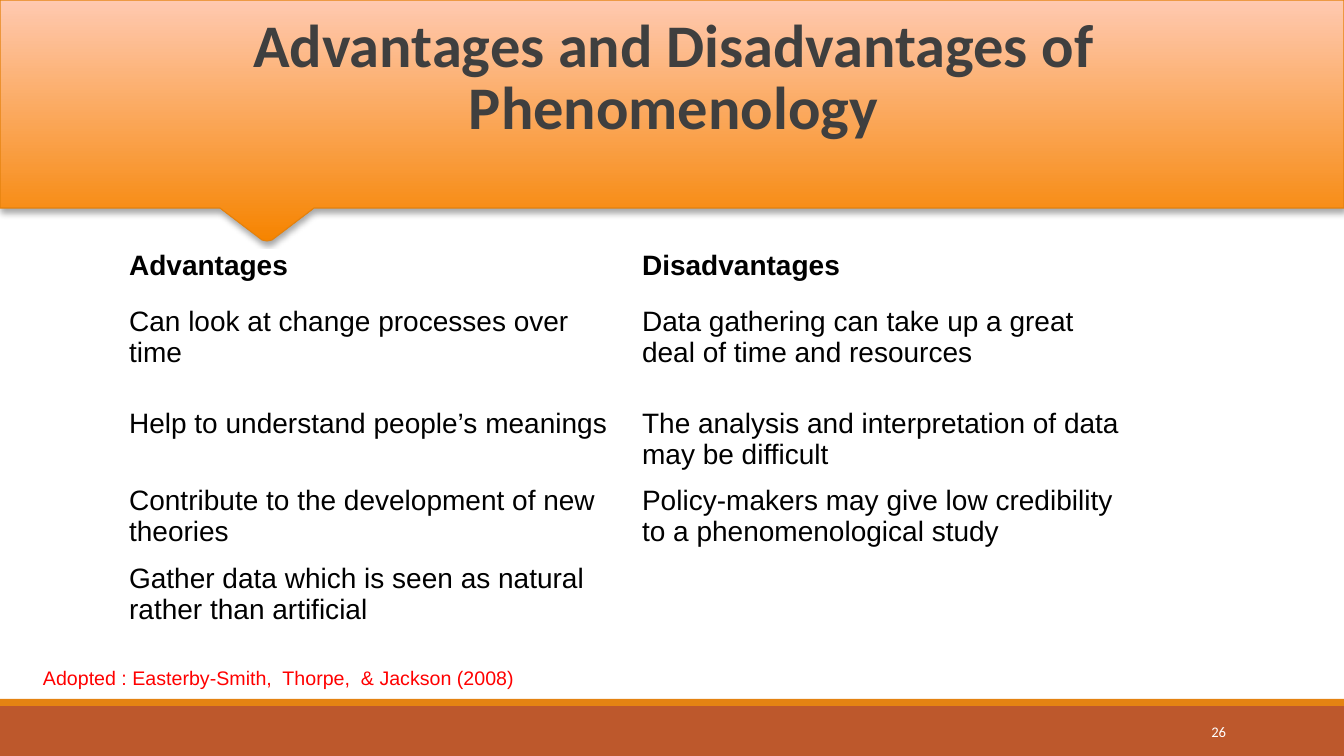
from lxml import etree
from pptx import Presentation
from pptx.dml.color import RGBColor
from pptx.enum.shapes import MSO_SHAPE
from pptx.enum.text import MSO_ANCHOR, MSO_AUTO_SIZE, PP_ALIGN
from pptx.util import Pt

RECTANGLE = MSO_SHAPE.RECTANGLE
TOP, MIDDLE, BOTTOM = MSO_ANCHOR.TOP, MSO_ANCHOR.MIDDLE, MSO_ANCHOR.BOTTOM
LEFT, CENTER, RIGHT = PP_ALIGN.LEFT, PP_ALIGN.CENTER, PP_ALIGN.RIGHT

# Content
TITLE = "Advantages and Disadvantages of Phenomenology\v"
ROWS = [
    ("Advantages", "Disadvantages"),
    ("Can look at change processes over time",
     "Data gathering can take up a great deal of time and resources"),
    ("Help to understand people’s meanings",
     "The analysis and interpretation of data may be difficult"),
    ("Contribute to the development of new theories",
     "Policy-makers may give low credibility to a phenomenological study"),
    ("Gather data which is seen as natural rather than artificial", ""),
]
CREDIT = "Adopted : Easterby-Smith,  Thorpe,  & Jackson (2008)"
PAGE_NUMBER = "26"

COLORS = {
    "footer": "BD582C", "stripe": "E48312",
    "banner_low": "F68400", "banner_high": "FFC9B0", "banner_edge": "E4810C",
    "title": "3F3F3F", "body": "000000", "credit": "FF0000", "number": "FFFFFF",
}

# Layout in px
WIDTH, HEIGHT = 1344, 756
EMU_PER_PX = 914400 / 100.8
BANNER_OUTLINE = [
    (0, 0), (0, 208), (220, 208), (262, 240), (267, 241), (272, 240),
    (314, 208), (WIDTH, 208), (WIDTH, 0),
]
BARS = [("footer", 706, 50), ("stripe", 699, 7)]
TABLE_LEFT, TABLE_TOP, COLUMN_WIDTH = 119, 245, 513
ROW_HEIGHTS = [56, 102, 73, 73, 94]

DRAWING = "http://schemas.openxmlformats.org/drawingml/2006/main"
BANNER_SHADOW = (
    f'<a:effectLst xmlns:a="{DRAWING}">'
    '<a:outerShdw blurRad="39370" dist="22860" dir="5400000" rotWithShape="0">'
    '<a:srgbClr val="000000"><a:alpha val="35000"/></a:srgbClr>'
    '</a:outerShdw></a:effectLst>'
)


def px(length):
    return round(length * EMU_PER_PX)


def color(name):
    return RGBColor.from_string(COLORS[name])


def style(para, font_name, size, color_name, bold=False):
    for span in para.runs:
        span.font.name = font_name
        span.font.size = Pt(size)
        span.font.bold = bold
        span.font.color.rgb = color(color_name)


def add_text(page, text, area, font_name, size, color_name,
             bold=False, align=LEFT, anchor=TOP):
    box = page.shapes.add_textbox(*map(px, area))
    frame = box.text_frame
    frame.word_wrap = True
    frame.vertical_anchor = anchor
    frame.text = text
    para = frame.paragraphs[0]
    para.alignment = align
    style(para, font_name, size, color_name, bold)
    return frame


deck = Presentation()
deck.slide_width, deck.slide_height = px(WIDTH), px(HEIGHT)
page = deck.slides.add_slide(deck.slide_layouts[6])

# Bottom bars
for name, top, height in BARS:
    bar = page.shapes.add_shape(RECTANGLE, 0, px(top), px(WIDTH), px(height))
    bar.shadow.inherit = False
    bar.fill.solid()
    bar.fill.fore_color.rgb = color(name)
    bar.line.fill.background()

# Banner with pointer
builder = page.shapes.build_freeform(*BANNER_OUTLINE[0], scale=EMU_PER_PX)
builder.add_line_segments(BANNER_OUTLINE[1:], close=True)
banner = builder.convert_to_shape()
banner.fill.gradient()
banner.fill.gradient_angle = 90
for stop, name in zip(banner.fill.gradient_stops, ("banner_low", "banner_high")):
    stop.color.rgb = color(name)
banner.line.color.rgb = color("banner_edge")
banner.line.width = Pt(0.75)
banner.element.spPr.append(etree.fromstring(BANNER_SHADOW))

# Title
title = add_text(page, TITLE, (119, 59, 1109, 160), "Calibri", 43.2, "title",
                 bold=True, align=CENTER, anchor=BOTTOM)
title.paragraphs[0].line_spacing = 0.85
title.paragraphs[0].font.size = Pt(43.2)

# Comparison table
table = page.shapes.add_table(
    len(ROWS), 2, px(TABLE_LEFT), px(TABLE_TOP),
    px(2 * COLUMN_WIDTH), px(sum(ROW_HEIGHTS))).table
table.first_row = table.horz_banding = False
for column in table.columns:
    column.width = px(COLUMN_WIDTH)
for row_index, (texts, height) in enumerate(zip(ROWS, ROW_HEIGHTS)):
    table.rows[row_index].height = px(height)
    for column_index, text in enumerate(texts):
        cell = table.cell(row_index, column_index)
        cell.fill.background()
        cell.text_frame.text = text
        style(cell.text_frame.paragraphs[0], "Arial", 20, "body", row_index == 0)
# Swap the default table style for the one without grid lines
table_style = table._tbl.tblPr.find(f"{{{DRAWING}}}tableStyleId")
table_style.text = "{2D5ABB26-0587-4C30-8999-92F81FD0307C}"

# Page number and credit
add_text(page, PAGE_NUMBER, (1092, 712, 144, 40), "Calibri", 10.5, "number",
         align=RIGHT, anchor=MIDDLE)
credit = add_text(page, CREDIT, (33, 661, 672, 34), "Arial", 14, "credit")
credit.auto_size = MSO_AUTO_SIZE.SHAPE_TO_FIT_TEXT

deck.save("out.pptx")
